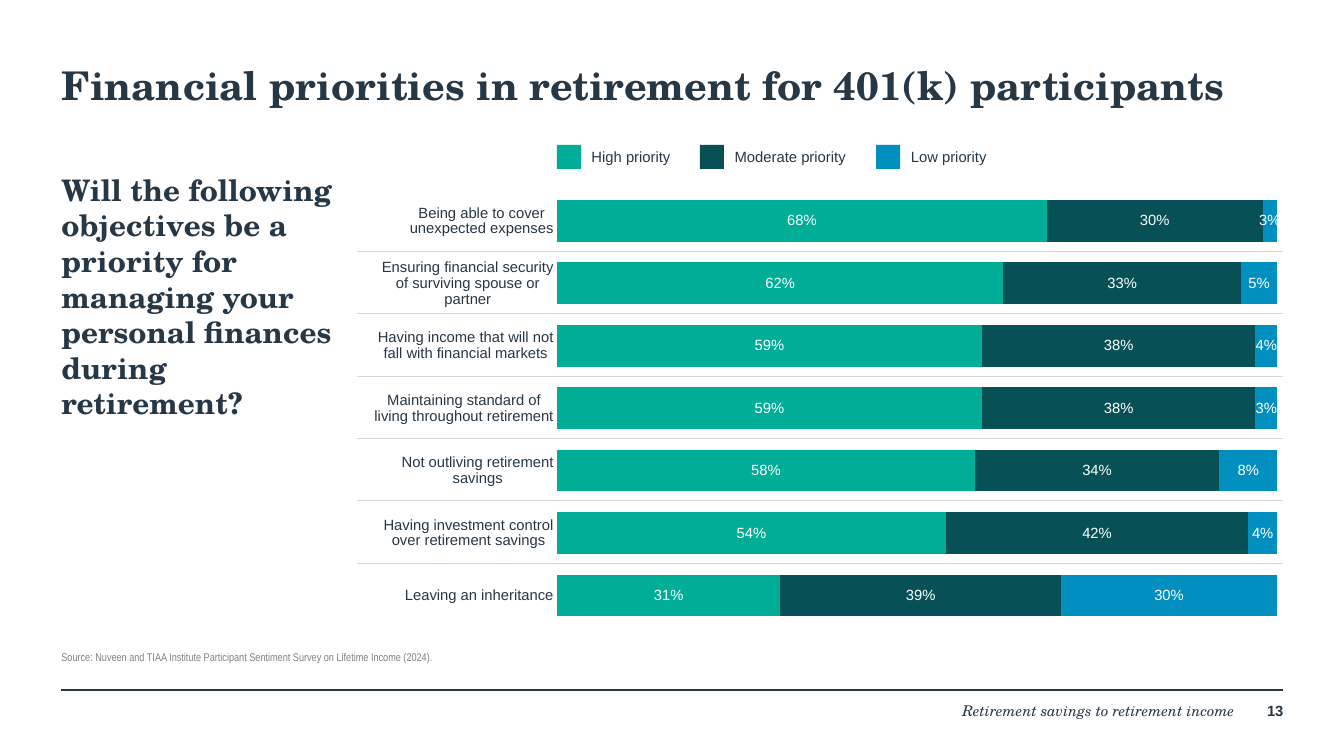
"""Build the slide on financial priorities in retirement."""
from lxml import etree
from pptx import Presentation
from pptx.chart.data import CategoryChartData
from pptx.dml.color import RGBColor
from pptx.enum.chart import XL_CHART_TYPE, XL_LABEL_POSITION, XL_TICK_MARK
from pptx.enum.shapes import MSO_CONNECTOR, MSO_SHAPE
from pptx.enum.text import MSO_ANCHOR, PP_ALIGN
from pptx.oxml import parse_xml
from pptx.oxml.ns import nsdecls, qn
from pptx.util import Inches, Pt

STACKED = XL_CHART_TYPE.BAR_STACKED
CENTER = XL_LABEL_POSITION.CENTER
NO_TICK = XL_TICK_MARK.NONE
STRAIGHT = MSO_CONNECTOR.STRAIGHT
RECT = MSO_SHAPE.RECTANGLE
TOP, BOTTOM = MSO_ANCHOR.TOP, MSO_ANCHOR.BOTTOM
LEFT, RIGHT = PP_ALIGN.LEFT, PP_ALIGN.RIGHT


class Theme:
    """Colours, fonts and type sizes."""
    ink, gray, rule, white = "263746", "808080", "D9D9D9", "FFFFFF"
    serif, sans, narrow = "TeX Gyre Schola", "Arial", "Arial Narrow"
    title, lead, base, small = 32, 24, 12, 9


TITLE = "Financial priorities in retirement for 401(k) participants"
LEAD = ("Will the following objectives be a priority for managing your "
        "personal finances during retirement?")
SOURCE = ("Source: Nuveen and TIAA Institute Participant Sentiment Survey "
          "on Lifetime Income (2024).")
FOOTER = "Retirement savings to retirement income"
PAGE = "13"

LEGEND = [
    ("High priority", "00AD97", 6.26, 1.2),
    ("Moderate priority", "075156", 7.87, 1.5),
    ("Low priority", "008FBE", 9.85, 1.0),
]
ROWS = [
    ("Being able to cover unexpected expenses", 0.68, 0.30, 0.03),
    ("Ensuring financial security of surviving spouse or partner",
     0.62, 0.33, 0.05),
    ("Having income that will not fall with financial markets",
     0.59, 0.38, 0.04),
    ("Maintaining standard of living throughout retirement",
     0.59, 0.38, 0.03),
    ("Not outliving retirement savings", 0.58, 0.34, 0.08),
    ("Having investment control over retirement savings",
     0.54, 0.42, 0.04),
    ("Leaving an inheritance", 0.31, 0.39, 0.30),
]

EDGE, END = 0.69, 14.42
RULE_X, RULE_Y, STEP = 4.01, 2.83, 0.7
KEY_Y, KEY, KEY_GAP = 1.63, 0.27, 0.39
CHART = (4.21, 1.57, 10.21, 5.74)
PLOT = {"x": 0.2, "y": 0.1, "w": 0.795, "h": 0.856}
PLOT.update(x=0.199, y=0.098)


def style(font, size, color, face=Theme.sans, bold=False, italic=False):
    font.size, font.name = Pt(size), face
    font.bold, font.italic = bold, italic
    font.color.rgb = RGBColor.from_string(color)


def add_text(slide, box, text, size, color=Theme.ink, face=Theme.sans,
             bold=False, italic=False, align=LEFT, anchor=TOP):
    frame = slide.shapes.add_textbox(*map(Inches, box)).text_frame
    frame.word_wrap = True
    frame.vertical_anchor = anchor
    frame.margin_left = frame.margin_right = 0
    frame.margin_top = frame.margin_bottom = 0
    para = frame.paragraphs[0]
    para.alignment = align
    run = para.add_run()
    run.text = text
    style(run.font, size, color, face, bold, italic)


def add_rule(slide, left, top, color, width):
    line = slide.shapes.add_connector(
        STRAIGHT, Inches(left), Inches(top), Inches(END), Inches(top))
    line.line.color.rgb = RGBColor.from_string(color)
    line.line.width = Pt(width)
    etree.SubElement(line._element.spPr, qn("a:effectLst"))


def place_plot(chart):
    modes = '<c:xMode val="edge"/><c:yMode val="edge"/>'
    sizes = "".join(f'<c:{k} val="{v}"/>' for k, v in PLOT.items())
    layout = parse_xml(
        f'<c:layout {nsdecls("c")}><c:manualLayout>'
        f'<c:layoutTarget val="inner"/>{modes}{sizes}'
        '</c:manualLayout></c:layout>')
    area = chart._chartSpace.chart.plotArea
    for old in area.findall(qn("c:layout")):
        area.remove(old)
    area.insert(0, layout)


def add_bars(slide):
    names, *values = zip(*ROWS[::-1])
    data = CategoryChartData(number_format="0%")
    data.categories = names
    for (name, *_), nums in zip(LEGEND, values):
        data.add_series(name, nums)
    chart = slide.shapes.add_chart(
        STACKED, *map(Inches, CHART), data).chart
    chart.has_legend = chart.has_title = False
    style(chart.font, Theme.base, Theme.white)

    cats = chart.category_axis
    cats.major_tick_mark = cats.minor_tick_mark = NO_TICK
    cats.has_major_gridlines = False
    cats.format.line.fill.background()
    style(cats.tick_labels.font, Theme.base, Theme.ink)
    scale = chart.value_axis
    scale.minimum_scale, scale.maximum_scale = 0, 1
    scale.has_major_gridlines = scale.visible = False

    plot = chart.plots[0]
    plot.gap_width, plot.overlap = 50, 100
    plot.vary_by_categories = False
    for series, (_, color, *_) in zip(plot.series, LEGEND):
        series.format.fill.solid()
        series.format.fill.fore_color.rgb = RGBColor.from_string(color)
        labels = series.data_labels
        labels.show_value, labels.position = True, CENTER
        labels.number_format = "0%"
        labels.number_format_is_linked = False
        style(labels.font, Theme.base, Theme.white)
    place_plot(chart)


def add_legend(slide):
    for name, color, left, width in LEGEND:
        key = slide.shapes.add_shape(
            RECT, *map(Inches, (left, KEY_Y, KEY, KEY)))
        key.shadow.inherit = False
        key.fill.solid()
        key.fill.fore_color.rgb = RGBColor.from_string(color)
        key.line.fill.background()
        add_text(slide, (left + KEY_GAP, KEY_Y + 0.03, width, 0.2),
                 name, Theme.base)


def main():
    deck = Presentation()
    deck.slide_width, deck.slide_height = Inches(15.11), Inches(8.5)
    slide = deck.slides.add_slide(deck.slide_layouts[6])
    add_text(slide, (14.03, 7.89, 0.4, 0.33), PAGE, Theme.base,
             bold=True, align=RIGHT)
    add_rule(slide, EDGE, 7.76, Theme.ink, 2)
    add_text(slide, (5.32, 7.89, 8.56, 0.4), FOOTER, Theme.base,
             face=Theme.serif, italic=True, align=RIGHT)
    add_text(slide, (EDGE, 0.69, 13.74, 0.65), TITLE, Theme.title,
             face=Theme.serif, bold=True)
    add_text(slide, (EDGE, 7.05, 6.62, 0.41), SOURCE, Theme.small,
             Theme.gray, Theme.narrow, anchor=BOTTOM)
    add_bars(slide)
    add_legend(slide)
    for i in range(len(ROWS) - 1):
        add_rule(slide, RULE_X, RULE_Y + i * STEP, Theme.rule, 0.75)
    add_text(slide, (EDGE, 1.93, 3.13, 3.09), LEAD, Theme.lead,
             face=Theme.serif, bold=True)
    deck.save("out.pptx")


if __name__ == "__main__":
    main()
